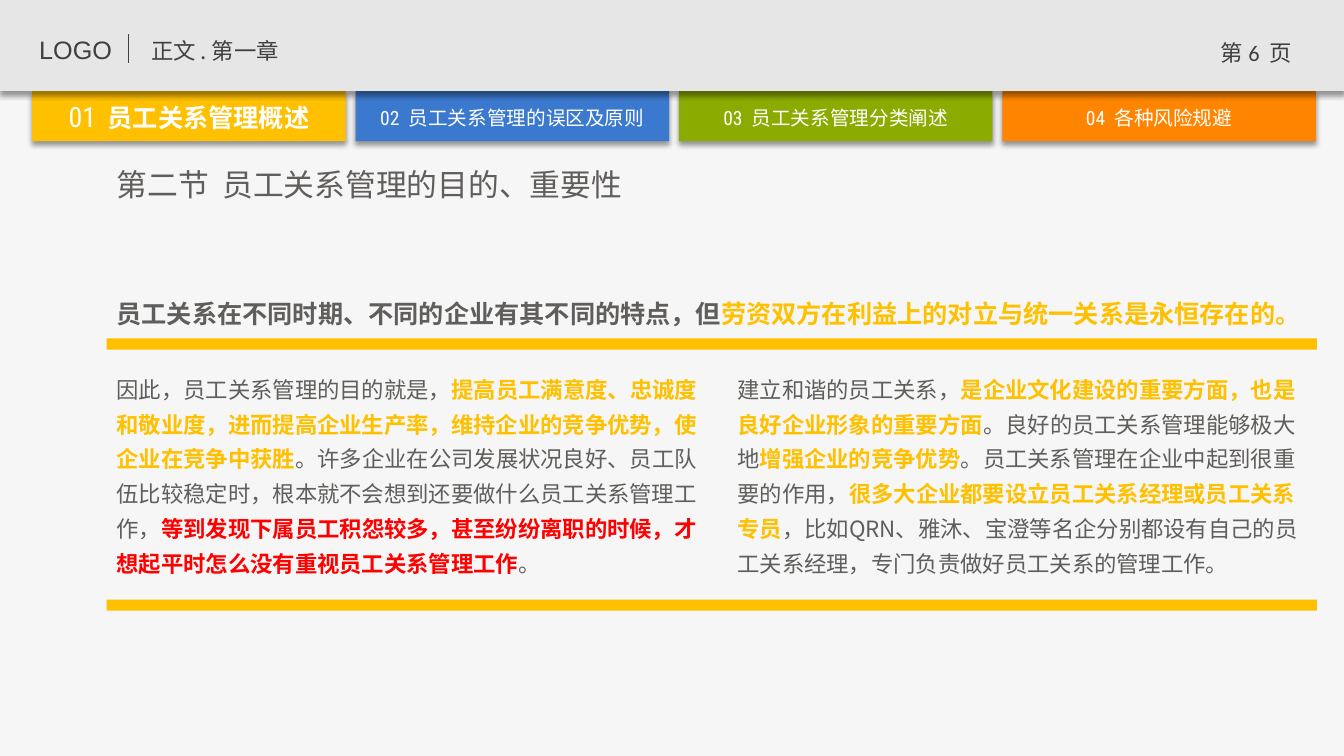
import collections
import dataclasses

import lxml.etree
import pptx
import pptx.dml.color
import pptx.enum.shapes
import pptx.enum.text
import pptx.oxml.ns
import pptx.util

Cm = pptx.util.Cm
qn = pptx.oxml.ns.qn
Align = pptx.enum.text.PP_ALIGN
Anchor = pptx.enum.text.MSO_ANCHOR
Box = collections.namedtuple("Box", "left top width height")


@dataclasses.dataclass(frozen=True)
class Theme:
    page: str = "F6F6F6"
    header: str = "E6E6E6"
    header_text: str = "404040"
    text: str = "5F5E5C"
    accent: str = "FFC000"
    warning: str = "FF0000"
    white: str = "FFFFFF"
    shadow: str = "000000"
    tabs: tuple = ("FFC000", "3B79CE", "8BAB00", "FF8500")
    chinese: str = "Noto Sans CJK SC"
    digits: str = "Roboto Condensed"
    logo_font: str = "Arial"
    page_font: str = "Calibri"
    heading_size: int = 22
    tab_number_size: int = 20
    large_size: int = 18
    body_size: int = 16
    tab_size: int = 14


THEME = Theme()


def color(value):
    return pptx.dml.color.RGBColor.from_string(value)


def style(size, rgb, name=THEME.chinese, bold=False):
    return {"size": pptx.util.Pt(size), "name": name, "bold": bold, "rgb": rgb}


PLAIN = style(THEME.body_size, THEME.text)
ACCENT = style(THEME.body_size, THEME.accent, bold=True)
WARNING = style(THEME.body_size, THEME.warning, bold=True)
HEADER = style(THEME.body_size, THEME.header_text)

TABS = ["员工关系管理概述", "员工关系管理的误区及原则", "员工关系管理分类阐述", "各种风险规避"]
STATEMENT = [
    ("员工关系在不同时期、不同的企业有其不同的特点，但", style(THEME.large_size, THEME.text, bold=True)),
    ("劳资双方在利益上的对立与统一关系是永恒存在的。", style(THEME.large_size, THEME.accent, bold=True)),
]
PURPOSE = [
    ("因此，员工关系管理的目的就是，", PLAIN),
    ("提高员工满意度、忠诚度和敬业度，进而提高企业生产率，维持企业的竞争优势，使企业在竞争中获胜", ACCENT),
    ("。许多企业在公司发展状况良好、员工队伍比较稳定时，根本就不会想到还要做什么员工关系管理工作，", PLAIN),
    ("等到发现下属员工积怨较多，甚至纷纷离职的时候，才想起平时怎么没有重视员工关系管理工作", WARNING),
    ("。", PLAIN),
]
IMPORTANCE = [
    ("建立和谐的员工关系，", PLAIN),
    ("是企业文化建设的重要方面，也是良好企业形象的重要方面", ACCENT),
    ("。良好的员工关系管理能够极大地", PLAIN),
    ("增强企业的竞争优势", ACCENT),
    ("。员工关系管理在企业中起到很重要的作用，", PLAIN),
    ("很多大企业都要设立员工关系经理或员工关系专员", ACCENT),
    ("，比如QRN、雅沐、宝澄等名企分别都设有自己的员工关系经理，专门负责做好员工关系的管理工作。", PLAIN),
]


def write(frame, spans, frame_format=None, **para_format):
    for key, value in {"word_wrap": True, **(frame_format or {})}.items():
        setattr(frame, key, value)
    para = frame.paragraphs[0]
    for key, value in para_format.items():
        setattr(para, key, value)
    for text, look in spans:
        span = para.add_run()
        span.text = text
        for key in ("size", "name", "bold"):
            setattr(span.font, key, look[key])
        span.font.color.rgb = color(look["rgb"])
        east_asian = lxml.etree.SubElement(span.font._element, qn("a:ea"))
        east_asian.set("typeface", THEME.chinese)


def add_text(page, box, spans, **para_format):
    frame = page.shapes.add_textbox(*map(Cm, box)).text_frame
    write(frame, spans, **para_format)


def add_block(page, box, fill):
    block = page.shapes.add_shape(pptx.enum.shapes.MSO_SHAPE.RECTANGLE, *map(Cm, box))
    block.shadow.inherit = False
    block.fill.solid()
    block.fill.fore_color.rgb = color(fill)
    block.line.fill.background()
    return block


def drop_shadow(block):
    effects = block._element.spPr.find(qn("a:effectLst"))
    shadow = lxml.etree.SubElement(
        effects, qn("a:outerShdw"), blurRad=str(pptx.util.Pt(4)),
        dist=str(pptx.util.Pt(3)), dir="5400000", algn="t", rotWithShape="0")
    tint = lxml.etree.SubElement(shadow, qn("a:srgbClr"), val=THEME.shadow)
    lxml.etree.SubElement(tint, qn("a:alpha"), val="40000")


def add_tabs(page, box, current=0):
    """Chapter tabs in equal widths, with the current one set larger."""
    gap = 0.25
    width = (box.width - gap * (len(TABS) - 1)) / len(TABS)
    for index, (title, fill) in enumerate(zip(TABS, THEME.tabs)):
        left = box.left + index * (width + gap)
        tab = add_block(page, Box(left, box.top, width, box.height), fill)
        drop_shadow(tab)
        active = index == current
        number_size = THEME.tab_number_size if active else THEME.tab_size
        title_size = THEME.large_size if active else THEME.tab_size
        spans = [
            (f"{index + 1:02}", style(number_size, THEME.white, THEME.digits)),
            ("  ", style(title_size, THEME.white, THEME.digits)),
            (title, style(title_size, THEME.white, bold=active)),
        ]
        frame_format = {
            "margin_left": 0, "margin_right": 0, "margin_bottom": 0,
            "margin_top": Cm(0 if active else 0.1), "vertical_anchor": Anchor.MIDDLE,
        }
        write(tab.text_frame, spans, frame_format, alignment=Align.CENTER)


def add_header(page, box):
    drop_shadow(add_block(page, box, THEME.header))
    logo = style(THEME.large_size, THEME.header_text, THEME.logo_font)
    add_text(page, Box(box.left + 0.74, box.top + 0.74, 2.49, 1.02), [("LOGO", logo)])
    divider_x = box.left + 3.23
    divider = page.shapes.add_connector(
        pptx.enum.shapes.MSO_CONNECTOR.STRAIGHT,
        *map(Cm, (divider_x, box.top + 0.86, divider_x, box.top + 1.6)))
    divider.line.color.rgb = color(THEME.header_text)
    divider.line.width = pptx.util.Pt(0.75)
    lxml.etree.SubElement(divider._element.spPr, qn("a:effectLst"))
    add_text(page, Box(box.left + 3.56, box.top + 0.81, 8.31, 0.94), [("正文 . 第一章", HEADER)])
    number = style(THEME.body_size, THEME.header_text, THEME.page_font)
    add_text(page, Box(box.left + box.width - 3.73, box.top + 0.86, 3.05, 1.02),
             [("第 ", HEADER), ("6  ", number), ("页", HEADER)], alignment=Align.CENTER)


def add_body(page, box):
    """Section heading, key statement and two columns between rules."""
    heading = style(THEME.heading_size, THEME.text)
    add_text(page, Box(box.left, box.top, 14.66, 1.19),
             [("第二节  员工关系管理的目的、重要性", heading)])
    add_text(page, Box(box.left, box.top + 3.12, box.width, 1.17), STATEMENT,
             line_spacing=1.3, space_after=pptx.util.Pt(6))
    column_top, column_height = box.top + 5.1, 5.59
    right_width = 14.86
    right_left = box.left + box.width - right_width
    add_text(page, Box(box.left, column_top, 15.27, column_height), PURPOSE, line_spacing=1.3)
    add_text(page, Box(right_left, column_top, right_width, column_height), IMPORTANCE,
             line_spacing=1.3)
    rule_height = 0.28
    for top in (box.top + 4.49, box.top + box.height - rule_height):
        add_block(page, Box(box.left, top, box.width, rule_height), THEME.accent)


def main():
    deck = pptx.Presentation()
    deck.slide_width, deck.slide_height = Cm(33.88), Cm(19.05)
    page = deck.slides.add_slide(deck.slide_layouts[6])
    page.background.fill.solid()
    page.background.fill.fore_color.rgb = color(THEME.page)
    add_tabs(page, Box(0.81, 2.29, 32.36, 1.27))
    add_header(page, Box(0, 0, 33.88, 2.29))
    add_body(page, Box(2.69, 4.04, 30.51, 11.35))
    deck.save("out.pptx")


if __name__ == "__main__":
    main()
